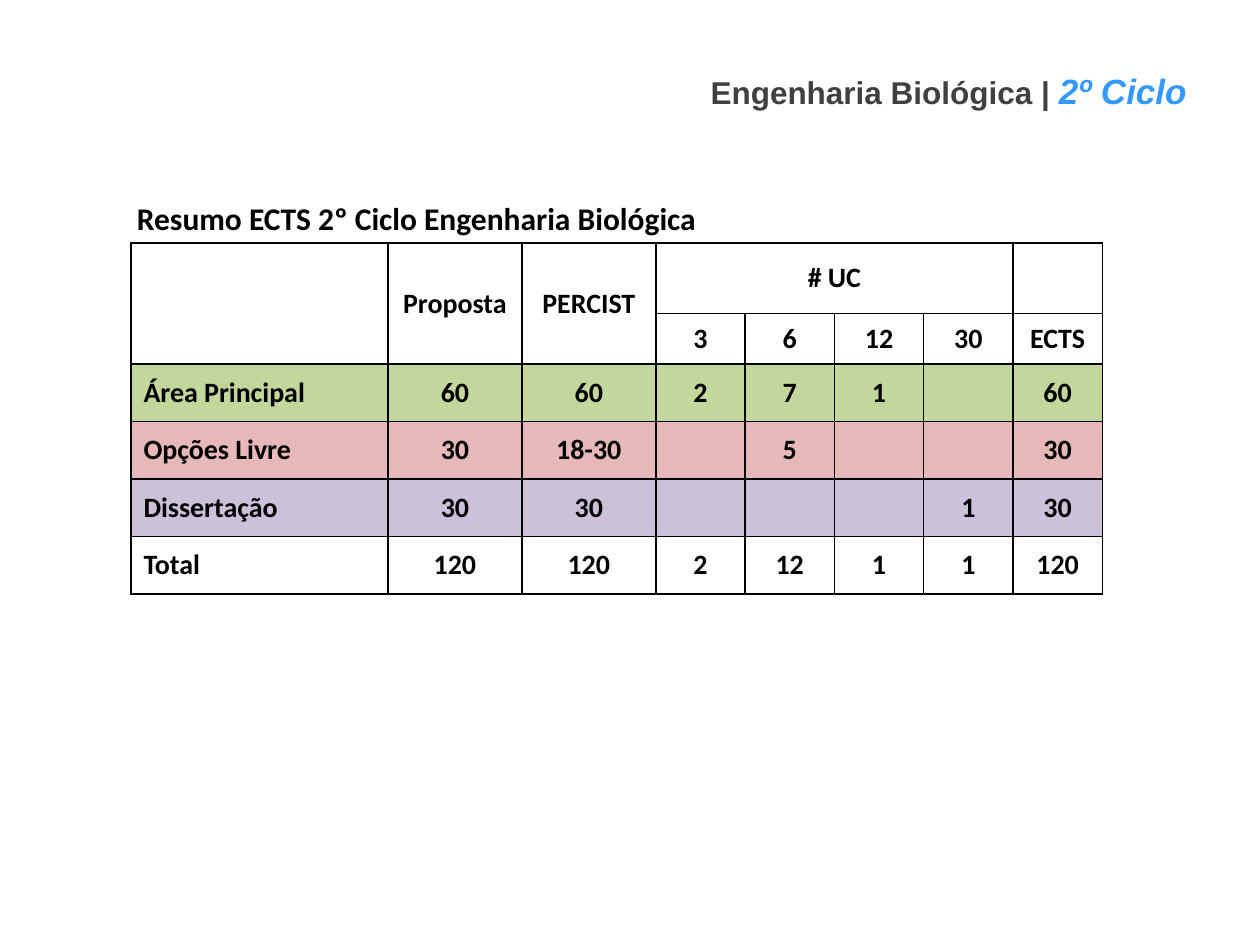
from lxml import etree
from pptx import Presentation
from pptx.dml.color import RGBColor
from pptx.enum.text import MSO_ANCHOR, PP_ALIGN
from pptx.oxml.ns import qn
from pptx.util import Cm, Pt

LEFT, CENTER = PP_ALIGN.LEFT, PP_ALIGN.CENTER
MIDDLE = MSO_ANCHOR.MIDDLE
HUES = {
    "black": "000000",
    "gray": "404040",
    "blue": "3399FF",
    "green": "C3D69B",
    "pink": "E6B9B8",
    "lilac": "CCC1DA",
}
COLS = [5.18] + [2.7] * 2 + [1.8] * 5
ROWS = [1.42, 0.94] + [1.16] * 4
DATA = [
    ["", "Proposta", "PERCIST", "# UC", "", "", "", ""],
    ["", "", "", "3", "6", "12", "30", "ECTS"],
    ["Área Principal", "60", "60", "2", "7", "1", "", "60"],
    ["Opções Livre", "30", "18-30", "", "5", "", "", "30"],
    ["Dissertação", "30", "30", "", "", "", "1", "30"],
    ["Total", "120", "120", "2", "12", "1", "1", "120"],
]
FILLS = [None, None, "green", "pink", "lilac", None]
MERGES = [(0, 0, 1, 0), (0, 1, 1, 1), (0, 2, 1, 2), (0, 3, 0, 6)]


def write(para, text, size=16, face="Calibri", hue="black", italic=False):
    """Add a bold run to a paragraph."""
    run = para.add_run()
    run.text = text
    font = run.font
    font.size, font.name = Pt(size), face
    font.bold, font.italic = True, italic
    font.color.rgb = RGBColor.from_string(HUES[hue])


def add_box(slide, left, top, align):
    """Add a heading box and return its paragraph."""
    frame = slide.shapes.add_textbox(Cm(left), Cm(top), Cm(12.55), Cm(1.73)).text_frame
    frame.word_wrap = True
    frame.vertical_anchor = MIDDLE
    para = frame.paragraphs[0]
    para.alignment, para.line_spacing = align, 1.5
    return para


def edge(cell):
    """Draw thin black borders on all sides of a cell."""
    props = cell._tc.get_or_add_tcPr()
    for spot, side in enumerate(("a:lnL", "a:lnR", "a:lnT", "a:lnB")):
        line = etree.Element(qn(side), w=str(Pt(1)))
        fill = etree.SubElement(line, qn("a:solidFill"))
        etree.SubElement(fill, qn("a:srgbClr"), val=HUES["black"])
        props.insert(spot, line)


def fill_cell(cell, text, align, hue):
    """Set the text, fill and borders of a cell."""
    cell.vertical_anchor = MIDDLE
    if hue:
        cell.fill.solid()
        cell.fill.fore_color.rgb = RGBColor.from_string(HUES[hue])
    else:
        cell.fill.background()
    edge(cell)
    if text:
        para = cell.text_frame.paragraphs[0]
        para.alignment = align
        write(para, text)


def add_grid(slide):
    """Add the table of credits."""
    table = slide.shapes.add_table(
        len(ROWS), len(COLS), Cm(2.64), Cm(4.9), Cm(sum(COLS)), Cm(sum(ROWS))
    ).table
    table.first_row = table.horz_banding = False
    for col, width in zip(table.columns, COLS):
        col.width = Cm(width)
    for row, height, texts, hue in zip(table.rows, ROWS, DATA, FILLS):
        row.height = Cm(height)
        for num, (cell, text) in enumerate(zip(row.cells, texts)):
            fill_cell(cell, text, CENTER if num else LEFT, hue)
    for top, left, end, right in MERGES:
        table.cell(top, left).merge(table.cell(end, right))


def main():
    """Build and save the slide."""
    deck = Presentation()
    deck.slide_width, deck.slide_height = Cm(25.4), Cm(19.05)
    slide = deck.slides.add_slide(deck.slide_layouts[6])
    head = add_box(slide, 12.85, 0.74, CENTER)
    write(head, "Engenharia Biológica | ", size=18, face="Arial", hue="gray")
    write(head, "2º Ciclo", size=20, face="Arial", hue="blue", italic=True)
    add_grid(slide)
    title = add_box(slide, 2.51, 3.33, LEFT)
    write(title, "Resumo ECTS 2º Ciclo Engenharia Biológica", size=18)
    deck.save("out.pptx")


if __name__ == "__main__":
    main()
